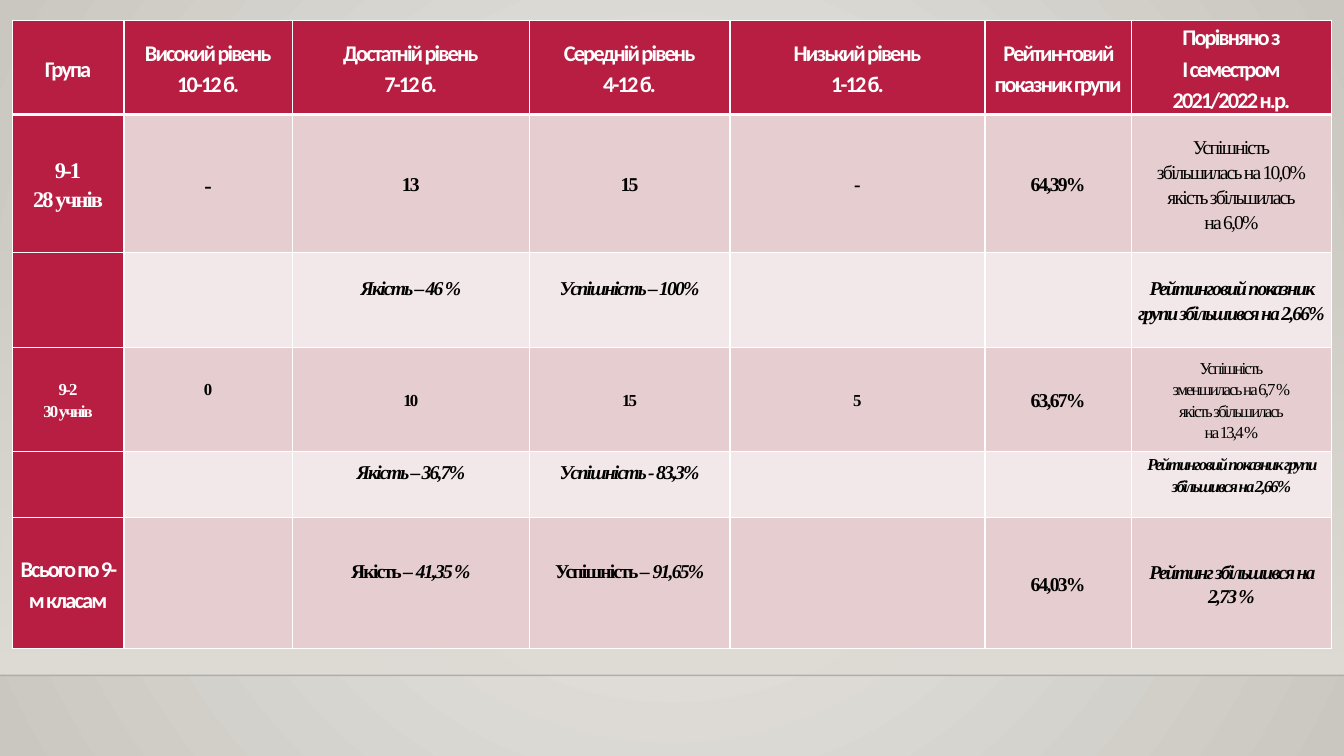
from lxml import etree
from pptx import Presentation
from pptx.dml.color import RGBColor
from pptx.enum.shapes import MSO_CONNECTOR, MSO_SHAPE
from pptx.enum.text import MSO_ANCHOR, PP_ALIGN
from pptx.oxml import parse_xml
from pptx.oxml.ns import qn
from pptx.util import Inches, Pt

RECTANGLE = MSO_SHAPE.RECTANGLE
STRAIGHT = MSO_CONNECTOR.STRAIGHT
CENTER = PP_ALIGN.CENTER
MIDDLE = MSO_ANCHOR.MIDDLE

WHITE = RGBColor(0xFF, 0xFF, 0xFF)
BLACK = RGBColor(0, 0, 0)
CRIMSON = RGBColor(0xB7, 0x1E, 0x42)
ROSE = RGBColor(0xE6, 0xCD, 0xCF)
PALE_ROSE = RGBColor(0xF3, 0xE8, 0xE9)
GLOW = RGBColor(0xEC, 0xEA, 0xE7)
EDGE = RGBColor(0xCA, 0xC7, 0xC1)
SAND = RGBColor(0xDF, 0xDB, 0xD5)

# A vertical bar starts the italic part of a cell.
ROWS = [
    ["Група", "Високий рівень\n10-12 б.", "Достатній рівень\n7-12 б.",
     "Середній рівень\n4-12 б.", "Низький рівень\n1-12 б.",
     "Рейтин-говий показник групи",
     "Порівняно з\nІ семестром\n2021/2022 н.р."],
    ["9-1\n28 учнів", "-", "13", "15", "-", "64,39%",
     "Успішність\nзбільшилась на 10,0%\nякість збільшилась\nна 6,0%"],
    ["", "", "|Якість – 46 %", "|Успішність – 100%", "", "",
     "|Рейтинговий показник групи збільшився на 2,66%"],
    ["9-2\n30 учнів", "0", "10", "15", "5", "63,67%",
     "Успішність\nзменшилась на 6,7 %\nякість збільшилась\nна 13,4 %"],
    ["", "", "|Якість – 36,7%", "|Успішність - 83,3%", "", "",
     "|Рейтинговий показник групи збільшився на 2,66%"],
    ["Всього по 9-м класам", "", "Якість – |41,35 %", "Успішність – |91,65%",
     "", "64,03%", "|Рейтинг збільшився на 2,73 %"],
]
COLUMN_WIDTHS = [1.11, 1.67, 2.35, 1.99, 2.53, 1.45, 1.99]
ROW_HEIGHTS = [0.88, 1.37, 0.94, 1.03, 0.66, 1.3]
ROW_SIZES = [16, 14, 14, 12, 14, 14]
CELL_SIZES = {(1, 0): 16, (1, 1): 16, (3, 5): 14, (4, 6): 12, (5, 0): 16}
CALIBRI_CELLS = {(0, column) for column in range(7)} | {(5, 0)}
REGULAR_CELLS = {(1, 6), (3, 6)}
BOTTOM_INSETS = {(2, 2): 0.26, (2, 3): 0.26, (3, 1): 0.22, (4, 2): 0.26,
                 (4, 3): 0.26, (4, 6): 0.2, (5, 2): 0.26, (5, 3): 0.26}


def set_gradient(fill, first, last):
    fill.gradient()
    for stop, color in zip(fill.gradient_stops, (first, last)):
        stop.color.rgb = color


def set_alpha(color_element, percent):
    alpha = etree.SubElement(color_element, qn("a:alpha"))
    alpha.set("val", str(percent * 1000))


def set_borders(cell, bottom_width):
    properties = cell._tc.get_or_add_tcPr()
    widths = {"lnL": 1, "lnR": 1, "lnT": 1, "lnB": bottom_width}
    for index, (side, width) in enumerate(widths.items()):
        border = parse_xml(
            f'<a:{side} xmlns:a="http://schemas.openxmlformats.org/drawingml/2006/main"'
            f' w="{Pt(width)}"><a:solidFill><a:srgbClr val="{WHITE}"/></a:solidFill></a:{side}>')
        properties.insert(index, border)


def write_text(cell, text, font_values, color):
    for index, line in enumerate(text.split("\n")):
        frame = cell.text_frame
        paragraph = frame.paragraphs[0] if index == 0 else frame.add_paragraph()
        paragraph.alignment = CENTER
        paragraph.line_spacing = 1.15
        for part_index, part in enumerate(line.split("|")):
            if not part:
                continue
            run = paragraph.add_run()
            run.text = part
            for name, value in font_values.items():
                setattr(run.font, name, value)
            run.font.italic = part_index == 1
            run.font.color.rgb = color
            run._r.get_or_add_rPr().set("spc", "-130")


def add_backdrop(slide):
    fill = slide.background.fill
    set_gradient(fill, GLOW, EDGE)
    gradient = slide.background._cSld.find(".//" + qn("a:gradFill"))
    linear = gradient.find(qn("a:lin"))
    circle = etree.Element(qn("a:path"), {"path": "circle"})
    etree.SubElement(circle, qn("a:fillToRect"), dict.fromkeys("ltrb", "50000"))
    gradient.replace(linear, circle)

    wall = slide.shapes.add_shape(
        RECTANGLE, 0, Inches(2.21), Inches(13.33), Inches(4.49))
    wall.shadow.inherit = False
    wall.line.fill.background()
    set_gradient(wall.fill, SAND, SAND)
    wall.fill.gradient_angle = 270
    set_alpha(wall._element.spPr.find(".//" + qn("a:srgbClr")), 0)

    floor_line = slide.shapes.add_connector(
        STRAIGHT, 0, Inches(6.7), Inches(13.33), Inches(6.7))
    floor_line.line.color.rgb = BLACK
    floor_line.line.width = Pt(1)
    properties = floor_line._element.spPr
    set_alpha(properties.find(".//" + qn("a:srgbClr")), 20)
    etree.SubElement(properties, qn("a:effectLst"))


def add_results(slide):
    table = slide.shapes.add_table(
        len(ROWS), len(COLUMN_WIDTHS), Inches(0.12), Inches(0.2),
        Inches(sum(COLUMN_WIDTHS)), Inches(sum(ROW_HEIGHTS))).table
    table.horz_banding = False
    for column, width in zip(table.columns, COLUMN_WIDTHS):
        column.width = Inches(width)
    for row, height in zip(table.rows, ROW_HEIGHTS):
        row.height = Inches(height)
    for row_index, texts in enumerate(ROWS):
        for column_index, text in enumerate(texts):
            place = (row_index, column_index)
            cell = table.cell(*place)
            heading = 0 in place
            calibri = place in CALIBRI_CELLS
            side_inset = Inches(0.04 if calibri else 0.07)
            layout = {
                "vertical_anchor": MIDDLE,
                "margin_left": side_inset, "margin_right": side_inset,
                "margin_top": 0,
                "margin_bottom": Inches(BOTTOM_INSETS.get(place, 0)),
            }
            for name, value in layout.items():
                setattr(cell, name, value)
            cell.fill.solid()
            band = ROSE if row_index % 2 else PALE_ROSE
            if row_index == len(ROWS) - 1:
                band = ROSE
            cell.fill.fore_color.rgb = CRIMSON if heading else band
            set_borders(cell, 3 if row_index == 0 else 1)
            font_values = {
                "name": "Calibri" if calibri else "Times New Roman",
                "size": Pt(CELL_SIZES.get(place, ROW_SIZES[row_index])),
                "bold": place not in REGULAR_CELLS,
            }
            write_text(cell, text, font_values, WHITE if heading else BLACK)


def main():
    presentation = Presentation()
    presentation.slide_width = Inches(13.33)
    presentation.slide_height = Inches(7.5)
    slide = presentation.slides.add_slide(presentation.slide_layouts[6])
    add_backdrop(slide)
    add_results(slide)
    presentation.save("out.pptx")


if __name__ == "__main__":
    main()
